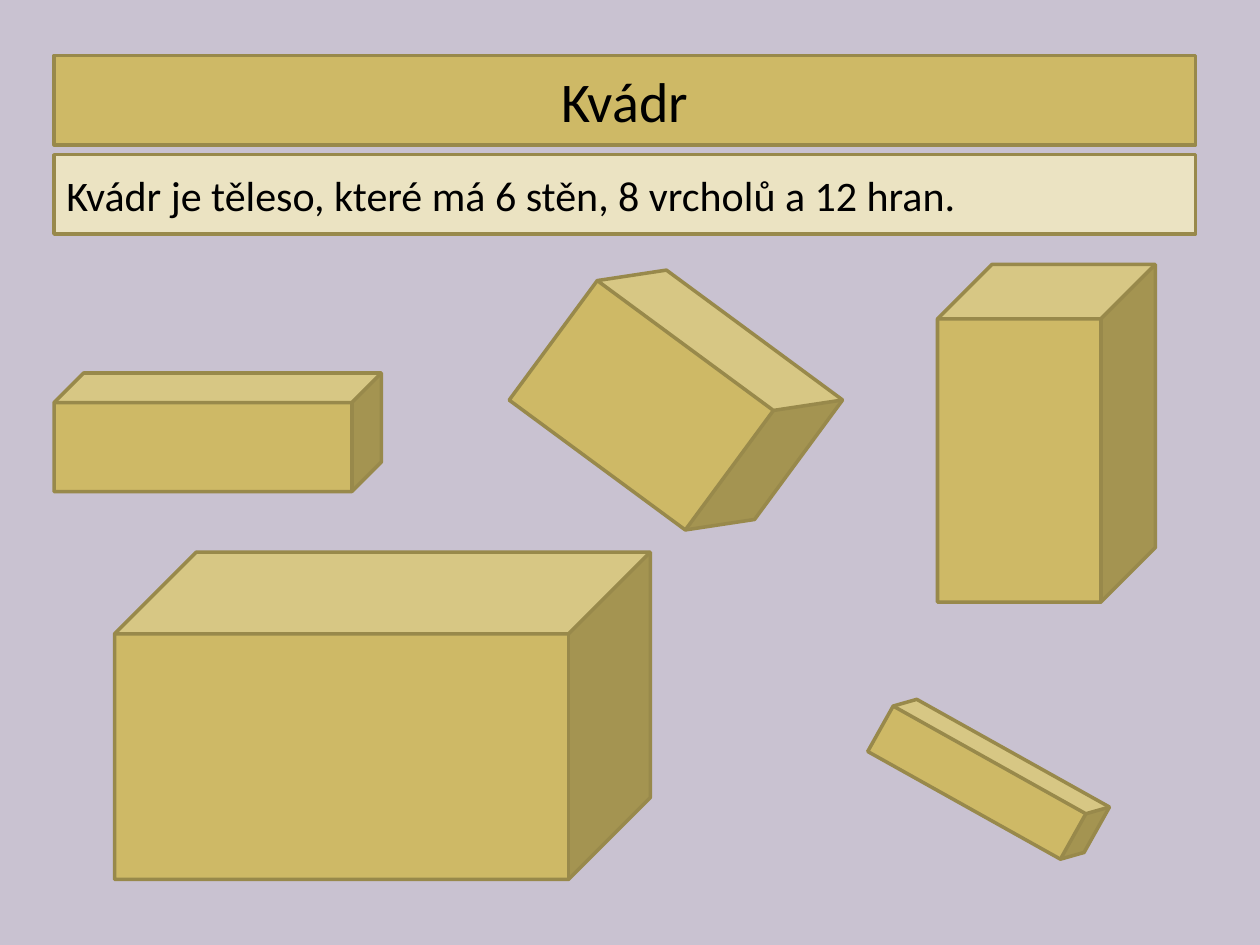
import pptx
import pptx.dml.color
import pptx.enum.shapes
import pptx.enum.text
import pptx.util

Cm = pptx.util.Cm
Pt = pptx.util.Pt
RGBColor = pptx.dml.color.RGBColor
MSO_SHAPE = pptx.enum.shapes.MSO_SHAPE
PP_ALIGN = pptx.enum.text.PP_ALIGN

LILAC = RGBColor(0xC9, 0xC2, 0xD1)
GOLD = RGBColor(0xCE, 0xB9, 0x66)
CREAM = RGBColor(0xEB, 0xE3, 0xC2)
OLIVE = RGBColor(0x98, 0x89, 0x4B)
BLACK = RGBColor(0, 0, 0)

# Both text bars share their left edge and width
BAR_LEFT, BAR_WIDTH = 1.09, 23.01

# left, top, width, height in cm, rotation in degrees
CUBOIDS = [
    (1.09, 7.52, 6.6, 2.39, 0),
    (10.92, 6.07, 5.41, 3.99, 36.4),
    (18.9, 5.33, 4.39, 6.81, 0),
    (2.31, 11.13, 10.8, 6.6, 0),
    (17.53, 15.01, 4.8, 1.4, 29.2),
]


class SlideBuilder:
    font = "Calibri"
    line_width = Pt(2)

    def __init__(self, slide):
        self.slide = slide

    def background(self, color):
        fill = self.slide.background.fill
        fill.solid()
        fill.fore_color.rgb = color

    def paint(self, sp, color):
        sp.fill.solid()
        sp.fill.fore_color.rgb = color
        sp.line.color.rgb = OLIVE
        sp.line.width = self.line_width

    def set_text(self, sp, text, size, align):
        tf = sp.text_frame
        tf.text = text
        tf.word_wrap = True
        tf.auto_size = pptx.enum.text.MSO_AUTO_SIZE.NONE
        tf.vertical_anchor = pptx.enum.text.MSO_ANCHOR.MIDDLE
        p = tf.paragraphs[0]
        p.alignment = align
        p.font.name = self.font
        p.font.size = Pt(size)
        p.font.color.rgb = BLACK

    def shape(self, kind, left, top, width, height, color):
        sp = self.slide.shapes.add_shape(
            kind, Cm(left), Cm(top), Cm(width), Cm(height))
        sp.shadow.inherit = False
        self.paint(sp, color)
        return sp

    def title(self, text, top, height):
        sp = self.slide.shapes.title
        sp.left, sp.top = Cm(BAR_LEFT), Cm(top)
        sp.width, sp.height = Cm(BAR_WIDTH), Cm(height)
        self.paint(sp, GOLD)
        self.set_text(sp, text, 32, PP_ALIGN.CENTER)

    def statement(self, text, top, height):
        sp = self.shape(MSO_SHAPE.RECTANGLE, BAR_LEFT, top, BAR_WIDTH, height, CREAM)
        self.set_text(sp, text, 24, PP_ALIGN.LEFT)

    def cuboid(self, left, top, width, height, rotation):
        sp = self.shape(MSO_SHAPE.CUBE, left, top, width, height, GOLD)
        sp.rotation = rotation


def main():
    prs = pptx.Presentation()
    prs.slide_width, prs.slide_height = Cm(25.4), Cm(19.05)
    s = SlideBuilder(prs.slides.add_slide(prs.slide_layouts[5]))
    s.background(LILAC)

    # Heading and definition
    s.title("Kvádr", 1.12, 1.8)
    s.statement("Kvádr je těleso, které má 6 stěn, 8 vrcholů a 12 hran.", 3.12, 1.6)

    # Example cuboids
    for cuboid in CUBOIDS:
        s.cuboid(*cuboid)

    prs.save("out.pptx")


if __name__ == "__main__":
    main()
